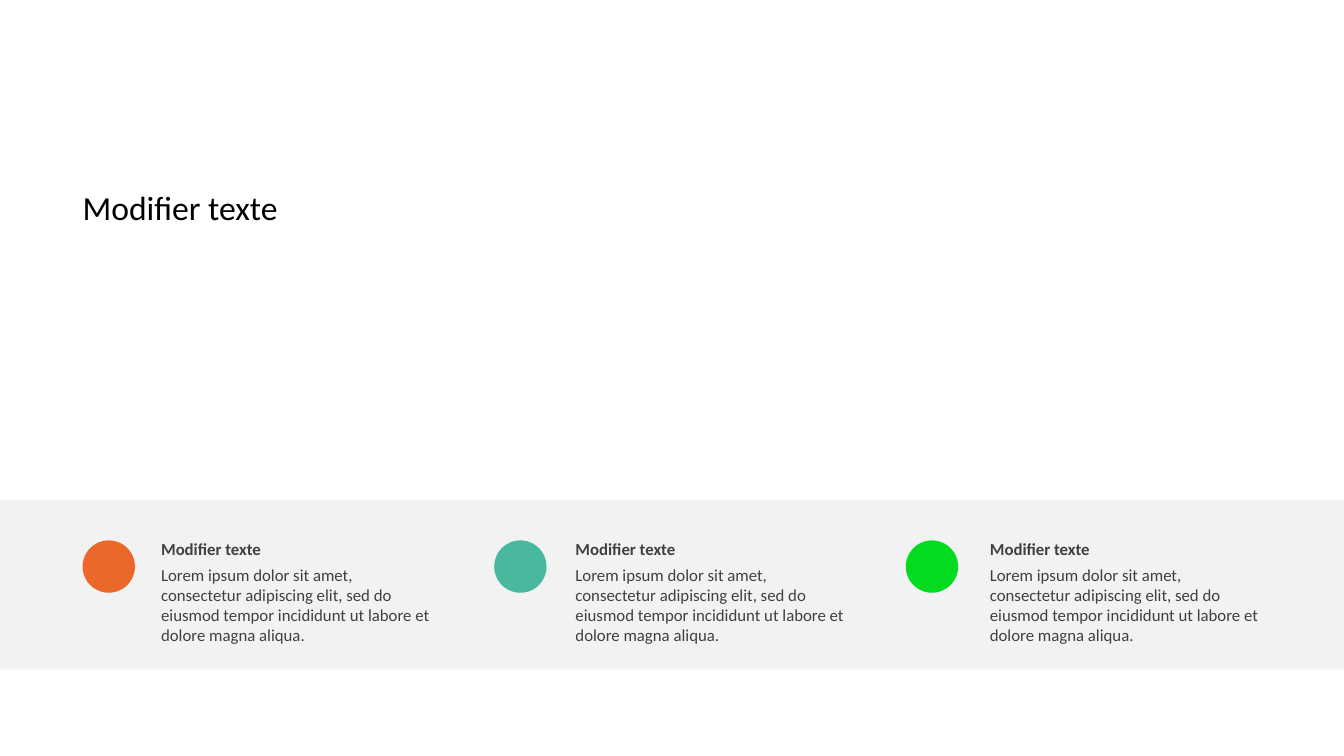
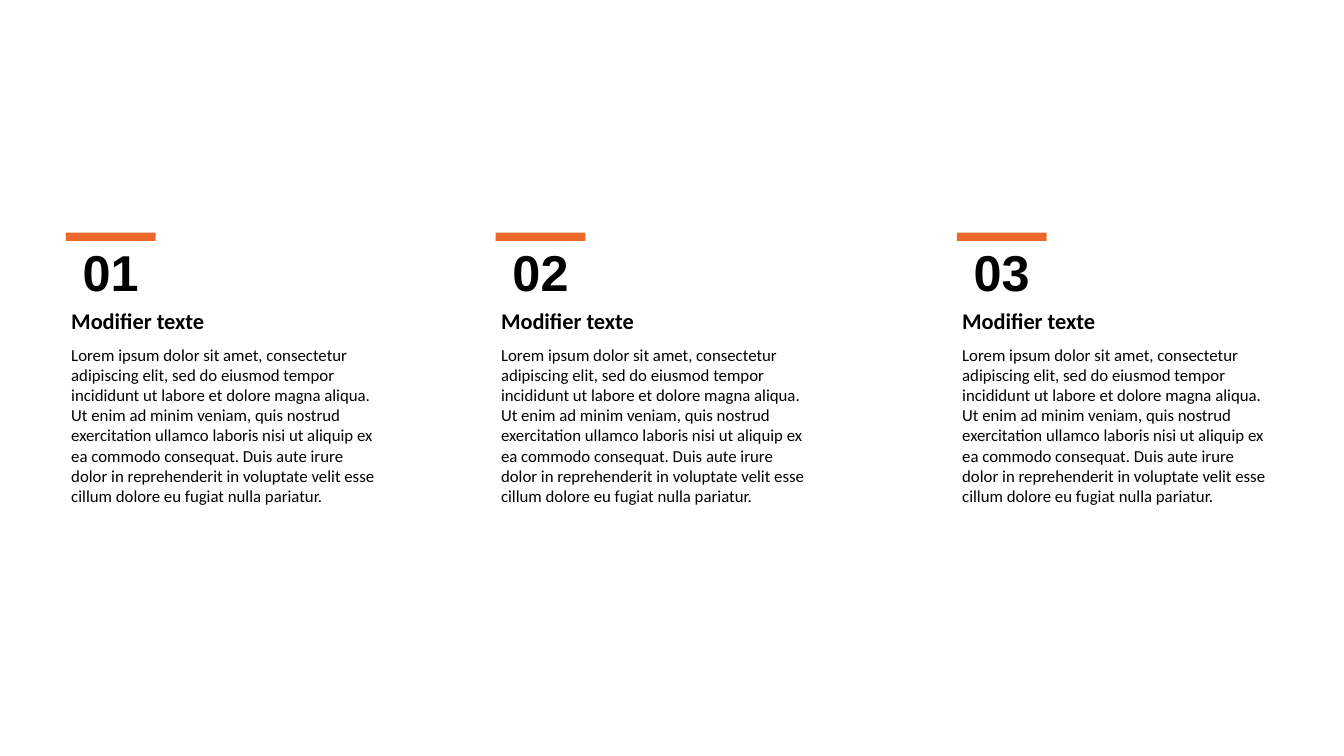
from pptx import Presentation
from pptx.dml.color import RGBColor as RGB
from pptx.enum.shapes import MSO_SHAPE as Shape
from pptx.enum.text import PP_ALIGN as Align
from pptx.oxml.ns import qn
from pptx.util import Pt

WIDE, HIGH = 960, 540
HUES = {
    "black": "000000",
    "grey": "404040",
    "band": "F2F2F2",
    "orange": "EC672A",
    "teal": "48B89E",
    "green": "03DB21",
}
FONT = "Calibri"
HEAD = "Modifier texte"
SHORT = (
    "Lorem ipsum dolor sit amet, consectetur adipiscing elit, sed do "
    "eiusmod tempor incididunt ut labore et dolore magna aliqua."
)
LONG = SHORT + (
    " Ut enim ad minim veniam, quis nostrud exercitation ullamco laboris "
    "nisi ut aliquip ex ea commodo consequat. Duis aute irure dolor in "
    "reprehenderit in voluptate velit esse cillum dolore eu fugiat nulla "
    "pariatur."
)


def add_run(para, text, size, hue="black", bold=False, face=FONT):
    run = para.add_run()
    run.text = text
    font = run.font
    font.name, font.size, font.bold = face, Pt(size), bold
    font.color.rgb = RGB.from_string(HUES[hue])


def add_text(slide, box, text, size, align=Align.LEFT, **style):
    frame = slide.shapes.add_textbox(*map(Pt, box)).text_frame
    frame.word_wrap = True
    para = frame.paragraphs[0]
    para.alignment = align
    add_run(para, text, size, **style)


def add_fill(slide, kind, box, hue):
    """Add a flat shape with no line."""
    shape = slide.shapes.add_shape(kind, *map(Pt, box))
    shape.shadow.inherit = False
    shape.fill.solid()
    shape.fill.fore_color.rgb = RGB.from_string(HUES[hue])
    shape.line.fill.background()


def add_lead(slide, box):
    """Fill the body placeholder with one unbulleted line."""
    title = slide.shapes.title
    title.element.getparent().remove(title.element)
    body = slide.placeholders[1]
    body.left, body.top, body.width, body.height = map(Pt, box)
    para = body.text_frame.paragraphs[0]
    props = para._p.get_or_add_pPr()
    props.set("marL", "0")
    props.set("indent", "0")
    props.append(props.makeelement(qn("a:buNone"), {}))
    para.line_spacing = 0.9
    para.space_before = Pt(0)
    add_run(para, HEAD, 24)


def add_band(slide, box):
    """Add the grey band with its three dots and notes."""
    left, top, _, _ = box
    add_fill(slide, Shape.RECTANGLE, box, "band")
    for i, hue in enumerate(("orange", "teal", "green")):
        dot = left + 59 + 294 * i
        note = left + 108 + 296 * i
        add_fill(slide, Shape.OVAL, (dot, top + 28.8, 37.4, 37.4), hue)
        add_text(slide, (note, top + 23.8, 211, 21.6), HEAD, 12,
                 hue="grey", bold=True)
        add_text(slide, (note, top + 42.5, 211, 65.5), SHORT, 12, hue="grey")


def add_column(slide, box, number):
    """Add a bar, a number, a heading and a text, one below the other."""
    left, top, width, height = box
    add_text(slide, (left, top + 76.3, width, height - 76.3), LONG, 12)
    add_text(slide, (left, top + 49.7, width, 26.6), HEAD, 16, bold=True)
    add_text(slide, (left, top + 2.2, 70.6, 51), number, 36,
             align=Align.CENTER, bold=True, face="Arial")
    add_fill(slide, Shape.RECTANGLE, (left + 3.2, top, 64.2, 5.8), "orange")


def band_slide(deck):
    slide = deck.slides.add_slide(deck.slide_layouts[1])
    add_band(slide, (0, 357.2, WIDE, 121))
    add_lead(slide, (51.8, 133.2, 828, 193))


def column_slide(deck):
    slide = deck.slides.add_slide(deck.slide_layouts[6])
    for i, left in enumerate((43.8, 350.8, 680.2), 1):
        add_column(slide, (left, 166.2, 236.2, 200), f"{i:02d}")


def main():
    deck = Presentation()
    deck.slide_width, deck.slide_height = Pt(WIDE), Pt(HIGH)
    band_slide(deck)
    column_slide(deck)
    deck.save("out.pptx")


if __name__ == "__main__":
    main()
